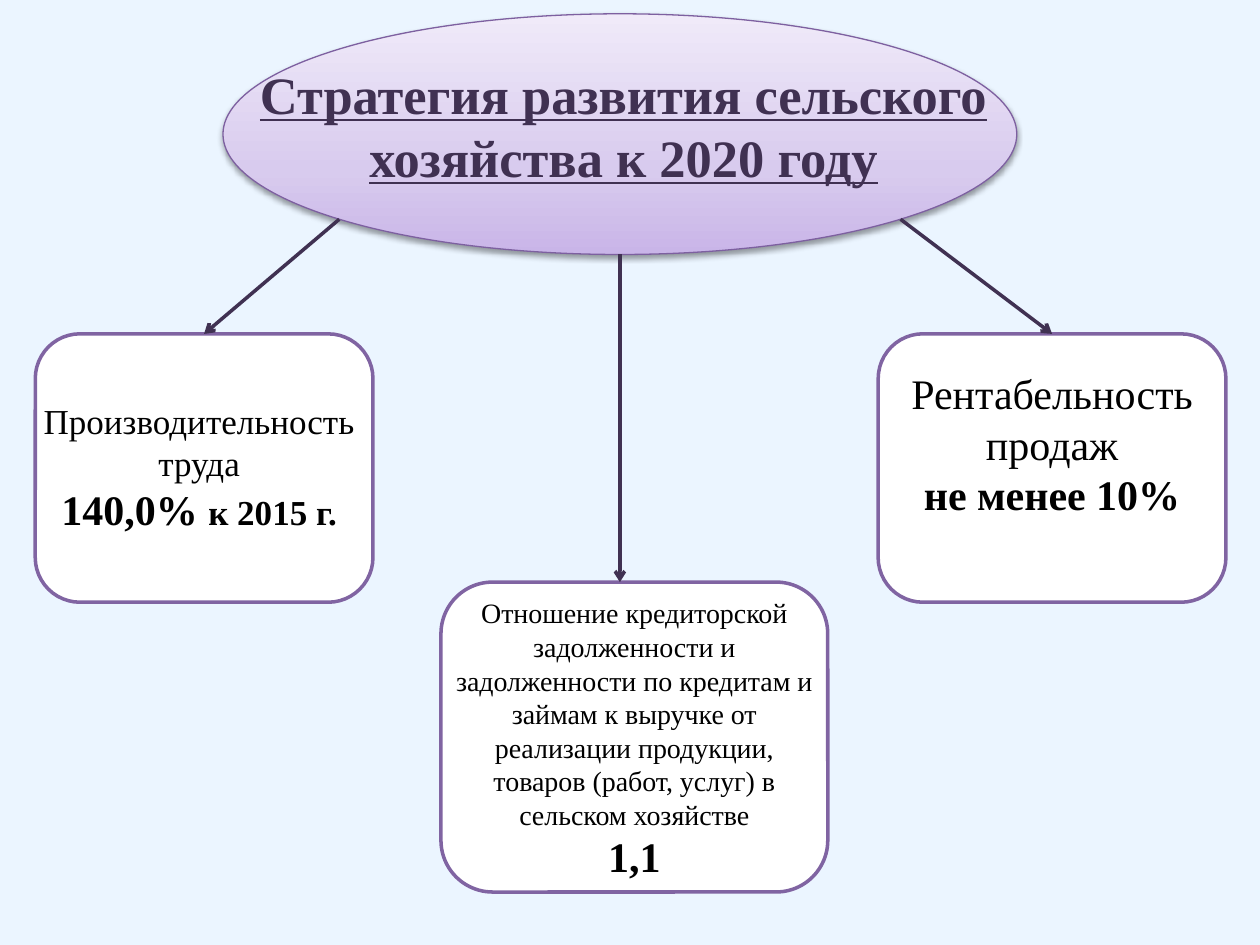
import math
import pptx
import pptx.util
import pptx.oxml
import pptx.oxml.ns
import pptx.dml.color
import pptx.enum.shapes
import pptx.enum.text

Inches = pptx.util.Inches
Color = pptx.dml.color.RGBColor
Shape = pptx.enum.shapes.MSO_SHAPE
SKY = Color(0xEB, 0xF5, 0xFF)
WHITE = Color(0xFF, 0xFF, 0xFF)
BLACK = Color(0, 0, 0)
PLUM = Color(0x40, 0x31, 0x52)
EDGE = Color(0x80, 0x64, 0xA2)
RIM = Color(0x7D, 0x60, 0xA0)
SHADES = [(0, Color(0xC9, 0xB5, 0xE8)), (35, Color(0xD8, 0xCB, 0xEE)),
          (100, Color(0xF0, 0xEA, 0xF9))]
FONT = "Times New Roman"
HEAD = (1.77, 0.11, 6.3, 1.91)
CARDS = [
    ((0.28, 2.65, 2.68, 2.13), (-0.04, 0.47, 2.68, 1.18),
     [[("Производительность труда", 20, False)],
      [("140,0% ", 24, True), ("к 2015 г.", 20, True)]]),
    ((3.5, 4.62, 3.07, 2.46), (0, 0.06, 3.07, 2.39),
     [[("Отношение кредиторской задолженности и задолженности по кредитам "
        "и займам к выручке от реализации продукции, товаров (работ, услуг) "
        "в сельском хозяйстве", 16, False)],
      [("1,1", 24, True)]]),
    ((6.97, 2.65, 2.76, 2.13), (0.12, 0.22, 2.52, 1.31),
     [[("Рентабельность продаж", 24, False)],
      [("не менее 10%", 24, True)]]),
]


def make(tag, **attrs):
    """Return a new drawing element with the given attributes."""
    node = pptx.oxml.parse_xml(f"<a:{tag} {pptx.oxml.ns.nsdecls('a')}/>")
    for name, value in attrs.items():
        node.set(name, str(value))
    return node


def add_run(para, text, size, bold, color):
    """Add one styled run to a centred paragraph."""
    para.alignment = pptx.enum.text.PP_ALIGN.CENTER
    run = para.add_run()
    run.text = text
    font = run.font
    font.name, font.size, font.bold = FONT, pptx.util.Pt(size), bold
    font.color.rgb = color
    return run


def add_form(slide, kind, box, color, width):
    """Add an outlined shape without a shadow."""
    form = slide.shapes.add_shape(kind, *map(Inches, box))
    form.shadow.inherit = False
    form.line.color.rgb = color
    form.line.width = pptx.util.Pt(width)
    return form


def add_head(slide, box):
    """Place the shaded ellipse and the title over it."""
    left, top, width, height = box
    oval = add_form(slide, Shape.OVAL, box, RIM, 0.75)
    oval.fill.gradient()
    oval.fill.gradient_angle = 90
    props = oval.element.spPr
    stops = props.find(".//" + pptx.oxml.ns.qn("a:gsLst"))
    for stop in list(stops):
        stops.remove(stop)
    for pos, color in SHADES:
        stop = make("gs", pos=pos * 1000)
        stop.append(make("srgbClr", val=color))
        stops.append(stop)
    shade = make("outerShdw", blurRad=40000, dist=20000, dir=5400000, rotWithShape=0)
    black = make("srgbClr", val=BLACK)
    black.append(make("alpha", val=38000))
    shade.append(black)
    props.find(pptx.oxml.ns.qn("a:effectLst")).append(shade)

    title = slide.shapes.title
    oval.element.addnext(title.element)
    title.left, title.top = Inches(left + 0.15), Inches(top + 0.33)
    title.width, title.height = Inches(width - 0.24), Inches(1.11)
    frame = title.text_frame
    frame.auto_size = pptx.enum.text.MSO_AUTO_SIZE.NONE
    frame.vertical_anchor = pptx.enum.text.MSO_ANCHOR.TOP
    run = add_run(frame.paragraphs[0],
                  "Стратегия развития сельского хозяйства к 2020 году",
                  30, True, PLUM)
    run.font.underline = True


def add_card(slide, box, inset, lines):
    """Place a rounded card with its text set off from the card corner."""
    card = add_form(slide, Shape.ROUNDED_RECTANGLE, box, EDGE, 2)
    card.fill.solid()
    card.fill.fore_color.rgb = WHITE
    place = (box[0] + inset[0], box[1] + inset[1], *inset[2:])
    frame = slide.shapes.add_textbox(*map(Inches, place)).text_frame
    frame.word_wrap = True
    for index, runs in enumerate(lines):
        para = frame.add_paragraph() if index else frame.paragraphs[0]
        for text, size, bold in runs:
            add_run(para, text, size, bold, BLACK)


def add_arrow(slide, start, end):
    """Draw an open-headed arrow between two points."""
    arrow = slide.shapes.add_connector(
        pptx.enum.shapes.MSO_CONNECTOR.STRAIGHT, *map(Inches, (*start, *end)))
    arrow.line.color.rgb = PLUM
    arrow.line.width = pptx.util.Pt(2)
    arrow.line._get_or_add_ln().append(make("tailEnd", type="arrow"))
    arrow.element.spPr.append(make("effectLst"))


def add_links(slide, head, boxes):
    """Link the lower rim of the ellipse to the top of each card."""
    left, top, width, height = head
    mid = left + width / 2
    for angle, box in zip((135, 90, 45), boxes):
        turn = math.radians(angle)
        start = (mid + width / 2 * math.cos(turn),
                 top + height / 2 * (1 + math.sin(turn)))
        goal = mid if angle == 90 else box[0] + box[2] / 2
        add_arrow(slide, start, (goal, box[1]))


def main():
    """Build the slide and save it."""
    deck = pptx.Presentation()
    deck.slide_width, deck.slide_height = Inches(10), Inches(7.5)
    slide = deck.slides.add_slide(deck.slide_layouts[5])
    back = slide.background.fill
    back.solid()
    back.fore_color.rgb = SKY
    add_head(slide, HEAD)
    for box, inset, lines in CARDS:
        add_card(slide, box, inset, lines)
    add_links(slide, HEAD, [card[0] for card in CARDS])
    deck.save("out.pptx")


if __name__ == "__main__":
    main()
